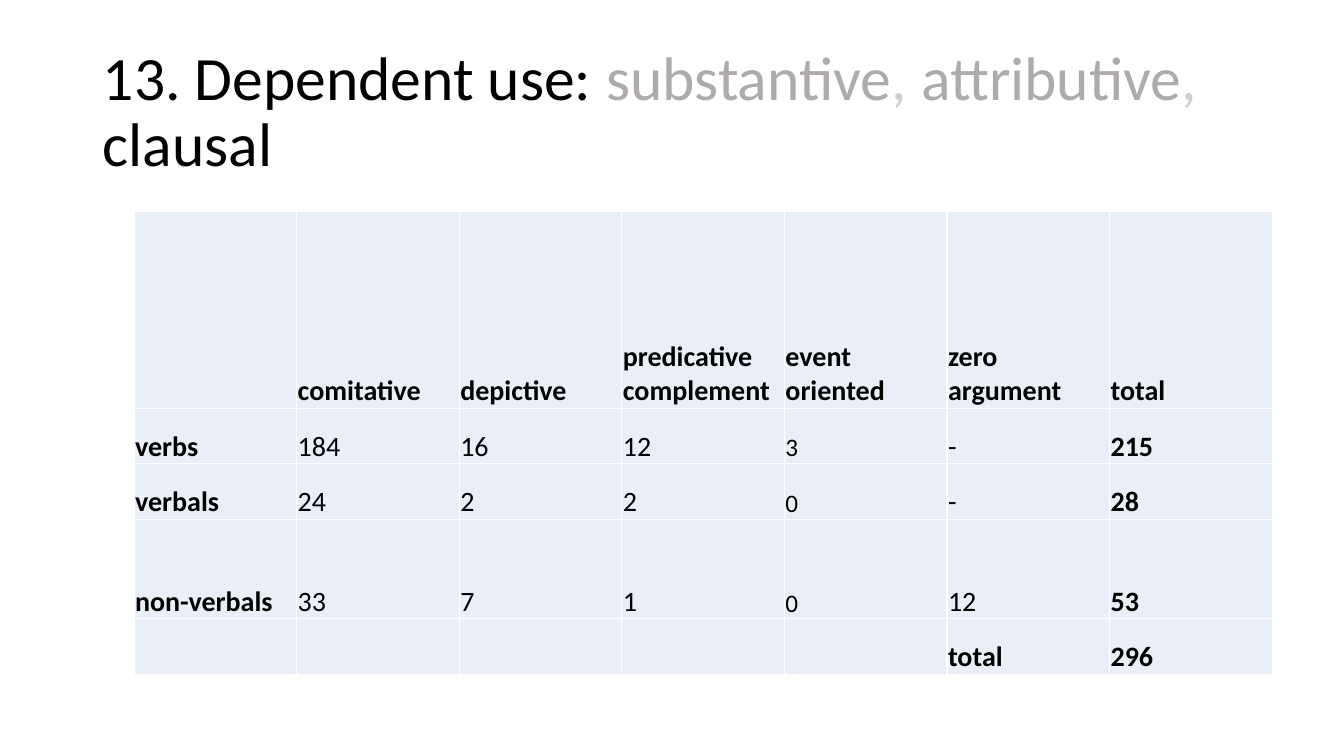
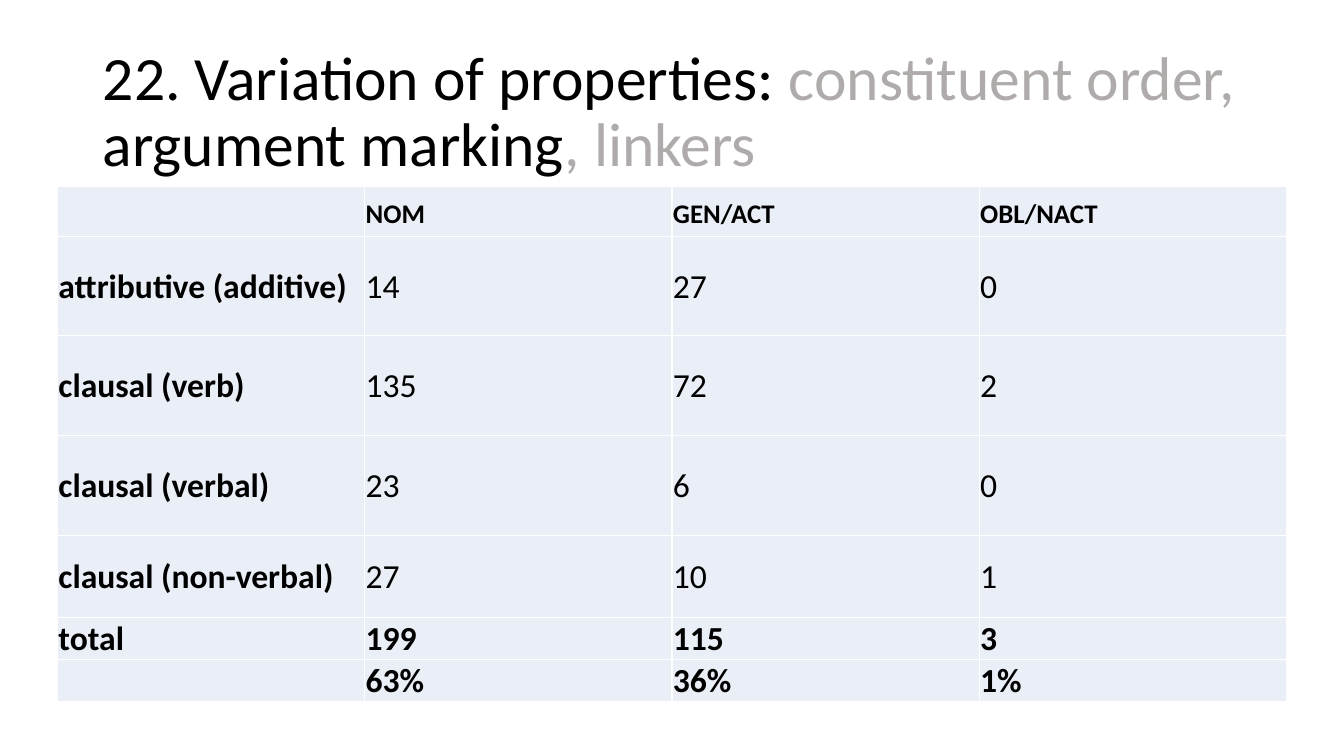
from lxml import etree
from pptx import Presentation
from pptx import util as u
from pptx.dml import color
from pptx.enum import text
from pptx.oxml import ns

COLORS = {"text": "000000", "muted": "AFABAB", "comma": "D0CECE", "cell": "EAEFF7", "border": "FFFFFF"}
FONT = "Calibri"
TITLE_BOX = (0.92, 0.4, 11.5, 1.45)
TITLE_ONLY = 5

USE_ROWS = [
    ["", "comitative", "depictive", "predicative complement", "event oriented", "zero argument", "total"],
    ["verbs", "184", "16", "12", "3", "-", "215"],
    ["verbals", "24", "2", "2", "0", "-", "28"],
    ["non-verbals", "33", "7", "1", "0", "12", "53"],
    ["", "", "", "", "", "total", "296"],
]
MARKING_ROWS = [
    ["", "nom", "gen/act", "obl/nact"],
    ["attributive (additive)", "14", "27", "0"],
    ["clausal (verb)", "135", "72", "2"],
    ["clausal (verbal)", "23", "6", "0"],
    ["clausal (non-verbal)", "27", "10", "1"],
    ["total", "199", "115", "3"],
    ["", "63%", "36%", "1%"],
]


def rgb(name):
    """Return the named colour."""
    return color.RGBColor.from_string(COLORS[name])


def add_text(paragraph, wording, size, fill="text", bold=False, small_caps=False):
    """Add one formatted run to a paragraph."""
    run = paragraph.add_run()
    run.text = wording
    run.font.name = FONT
    run.font.size = u.Pt(size)
    run.font.bold = bold
    run.font.color.rgb = rgb(fill)
    if small_caps:
        run.font._element.set("cap", "small")


def add_titled_slide(presentation, title_parts):
    """Add a slide whose title is made of (wording, colour) parts."""
    slide = presentation.slides.add_slide(presentation.slide_layouts[TITLE_ONLY])
    title = slide.shapes.title
    title.left, title.top, title.width, title.height = map(u.Inches, TITLE_BOX)
    frame = title.text_frame
    frame.word_wrap = True
    frame.auto_size = text.MSO_AUTO_SIZE.NONE
    frame.vertical_anchor = text.MSO_ANCHOR.MIDDLE
    paragraph = frame.paragraphs[0]
    paragraph.alignment = text.PP_ALIGN.LEFT
    paragraph.line_spacing = 0.9
    for wording, fill in title_parts:
        add_text(paragraph, wording, 44, fill=fill)
    return slide


def format_cell(cell, anchor):
    """Give a cell its borders, fill, margins and anchor."""
    properties = cell._tc.get_or_add_tcPr()
    for side in ("a:lnL", "a:lnR", "a:lnT", "a:lnB"):
        line = etree.SubElement(properties, ns.qn(side), w=str(u.Pt(1)))
        fill = etree.SubElement(line, ns.qn("a:solidFill"))
        etree.SubElement(fill, ns.qn("a:srgbClr"), val=COLORS["border"])
    cell.fill.solid()
    cell.fill.fore_color.rgb = rgb("cell")
    cell.margin_left = cell.margin_right = cell.margin_top = u.Inches(0.01)
    cell.margin_bottom = 0
    cell.vertical_anchor = anchor


def add_data_table(slide, box, rows, heights, anchor, alignment, text_format):
    """Fill a box with a table; text_format(row, column) gives each cell's text format."""
    left, top, width, height = map(u.Inches, box)
    table = slide.shapes.add_table(len(rows), len(rows[0]), left, top, width, height).table
    table.first_row = table.horz_banding = False
    for row, row_height in zip(table.rows, heights):
        row.height = u.Inches(row_height)
    for row_index, row in enumerate(rows):
        for column_index, wording in enumerate(row):
            cell = table.cell(row_index, column_index)
            format_cell(cell, anchor)
            if wording:
                paragraph = cell.text_frame.paragraphs[0]
                paragraph.alignment = alignment
                add_text(paragraph, wording, **text_format(row_index, column_index))


def use_format(row, column):
    """Embolden the headings and totals; the event oriented counts are smaller."""
    bold = row in (0, 4) or column in (0, 6)
    return {"size": 18 if column == 4 and not bold else 20, "bold": bold}


def marking_format(row, column):
    """Embolden the headings and totals; the case labels are small capitals."""
    return {"size": 24, "bold": row in (0, 5, 6) or column == 0, "small_caps": row == 0}


def add_dependent_use(presentation):
    """Add the slide on dependent use."""
    slide = add_titled_slide(presentation, [
        ("13. Dependent use: ", "text"), ("substantive", "muted"), (", ", "comma"),
        ("attributive", "muted"), (", ", "comma"), ("clausal", "text")])
    add_data_table(slide, (1.33, 2.1, 11.29, 4.59), USE_ROWS, [1.95, 0.55, 0.55, 0.99, 0.55],
                   text.MSO_ANCHOR.BOTTOM, text.PP_ALIGN.LEFT, use_format)


def add_argument_marking(presentation):
    """Add the slide on argument marking."""
    slide = add_titled_slide(presentation, [
        ("22. Variation of properties: ", "text"), ("constituent order, ", "muted"),
        ("argument marking", "text"), (", linkers", "muted")])
    add_data_table(slide, (0.57, 1.85, 12.19, 5.09), MARKING_ROWS,
                   [0.5, 0.98, 0.99, 0.99, 0.82, 0.41, 0.41],
                   text.MSO_ANCHOR.MIDDLE, text.PP_ALIGN.JUSTIFY, marking_format)


def main():
    """Build and save the presentation."""
    presentation = Presentation()
    presentation.slide_width = u.Inches(13.33)
    presentation.slide_height = u.Inches(7.5)
    add_dependent_use(presentation)
    add_argument_marking(presentation)
    presentation.save("out.pptx")


if __name__ == "__main__":
    main()
